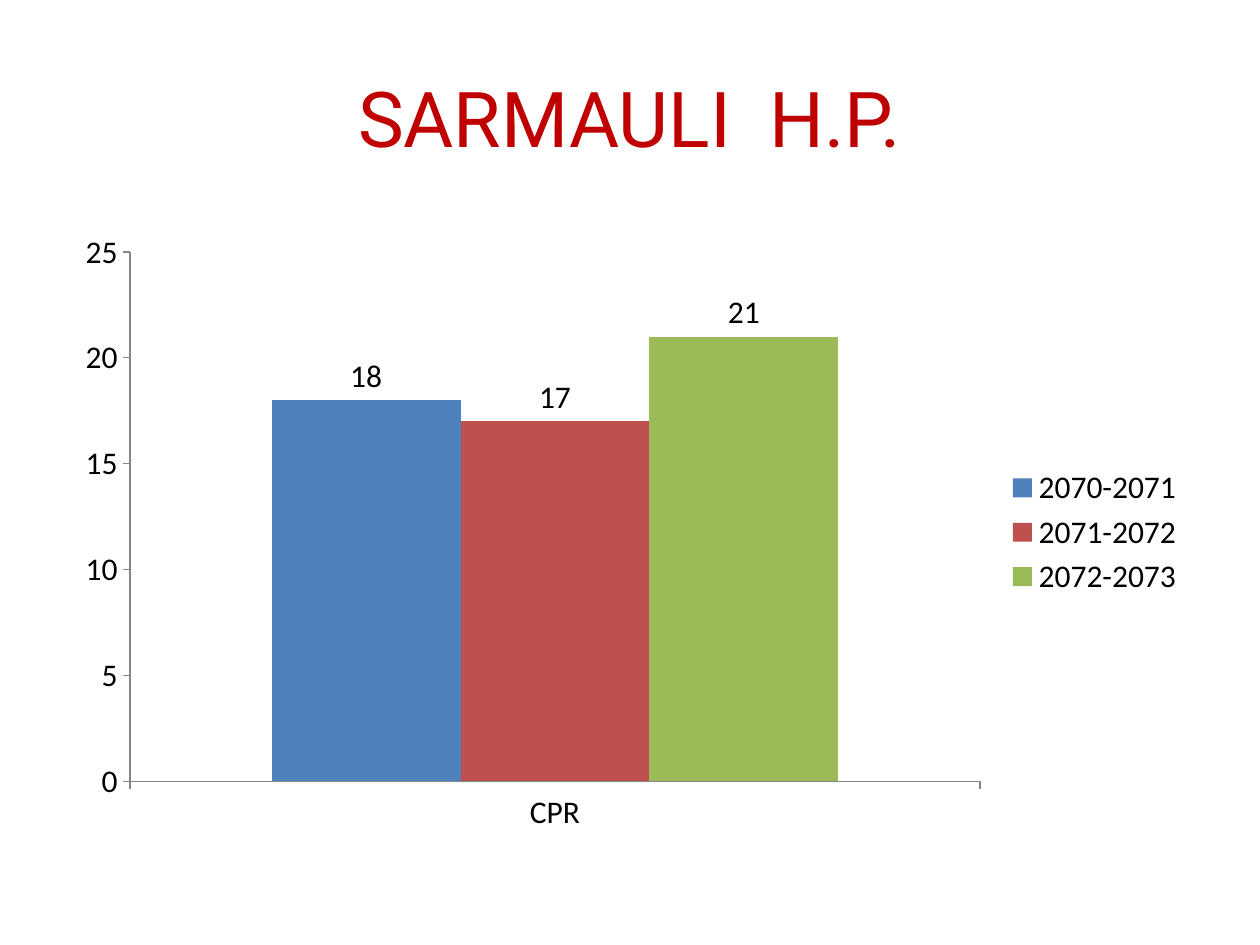
from pptx import Presentation
from pptx.chart.data import CategoryChartData
from pptx.dml.color import RGBColor
from pptx.enum.chart import XL_CHART_TYPE, XL_LABEL_POSITION, XL_LEGEND_POSITION, XL_TICK_MARK
from pptx.enum.text import MSO_ANCHOR, PP_ALIGN
from pptx.util import Pt

RED = RGBColor(0xC0, 0x00, 0x00)
BLACK = RGBColor(0x00, 0x00, 0x00)
GRAY = RGBColor(0x86, 0x86, 0x86)
BLUE = RGBColor(0x4F, 0x81, 0xBD)
BRICK = RGBColor(0xC0, 0x50, 0x4D)
GREEN = RGBColor(0x9B, 0xBB, 0x59)

YEARS = [("2070-2071", 18, BLUE), ("2071-2072", 17, BRICK), ("2072-2073", 21, GREEN)]

deck = Presentation()
deck.slide_width, deck.slide_height = Pt(720), Pt(540)
page = deck.slides.add_slide(deck.slide_layouts[6])

# Title
box = page.shapes.add_textbox(Pt(36), Pt(21.6), Pt(648), Pt(90))
frame = box.text_frame
frame.word_wrap = True
frame.vertical_anchor = MSO_ANCHOR.MIDDLE
frame.text = "SARMAULI  H.P."
para = frame.paragraphs[0]
para.alignment = PP_ALIGN.CENTER
span = para.runs[0]
span.font.name = "Roboto"
span.font.size = Pt(44)
span.font.color.rgb = RED

# Column chart, one series per year
data = CategoryChartData()
data.categories = ["CPR"]
for year, value, color in YEARS:
    data.add_series(year, [value])
chart = page.shapes.add_chart(
    XL_CHART_TYPE.COLUMN_CLUSTERED, Pt(36), Pt(126), Pt(648), Pt(356.4), data
).chart
chart.has_title = False
chart.font.name = "Calibri"
chart.font.size = Pt(18)
chart.font.color.rgb = BLACK

# Columns and their labels
plot = chart.plots[0]
plot.gap_width = 150
plot.overlap = 0
plot.vary_by_categories = False
for series, (year, value, color) in zip(plot.series, YEARS):
    series.format.fill.solid()
    series.format.fill.fore_color.rgb = color
    labels = series.data_labels
    labels.show_value = True
    labels.position = XL_LABEL_POSITION.OUTSIDE_END

# Axes
for axis in (chart.category_axis, chart.value_axis):
    axis.has_major_gridlines = False
    axis.major_tick_mark = XL_TICK_MARK.OUTSIDE
    axis.minor_tick_mark = XL_TICK_MARK.NONE
    axis.format.line.color.rgb = GRAY
    axis.format.line.width = Pt(0.75)
chart.value_axis.minimum_scale = 0
chart.value_axis.maximum_scale = 25
chart.value_axis.major_unit = 5

# Legend
chart.has_legend = True
chart.legend.position = XL_LEGEND_POSITION.RIGHT
chart.legend.include_in_layout = False

deck.save("out.pptx")
